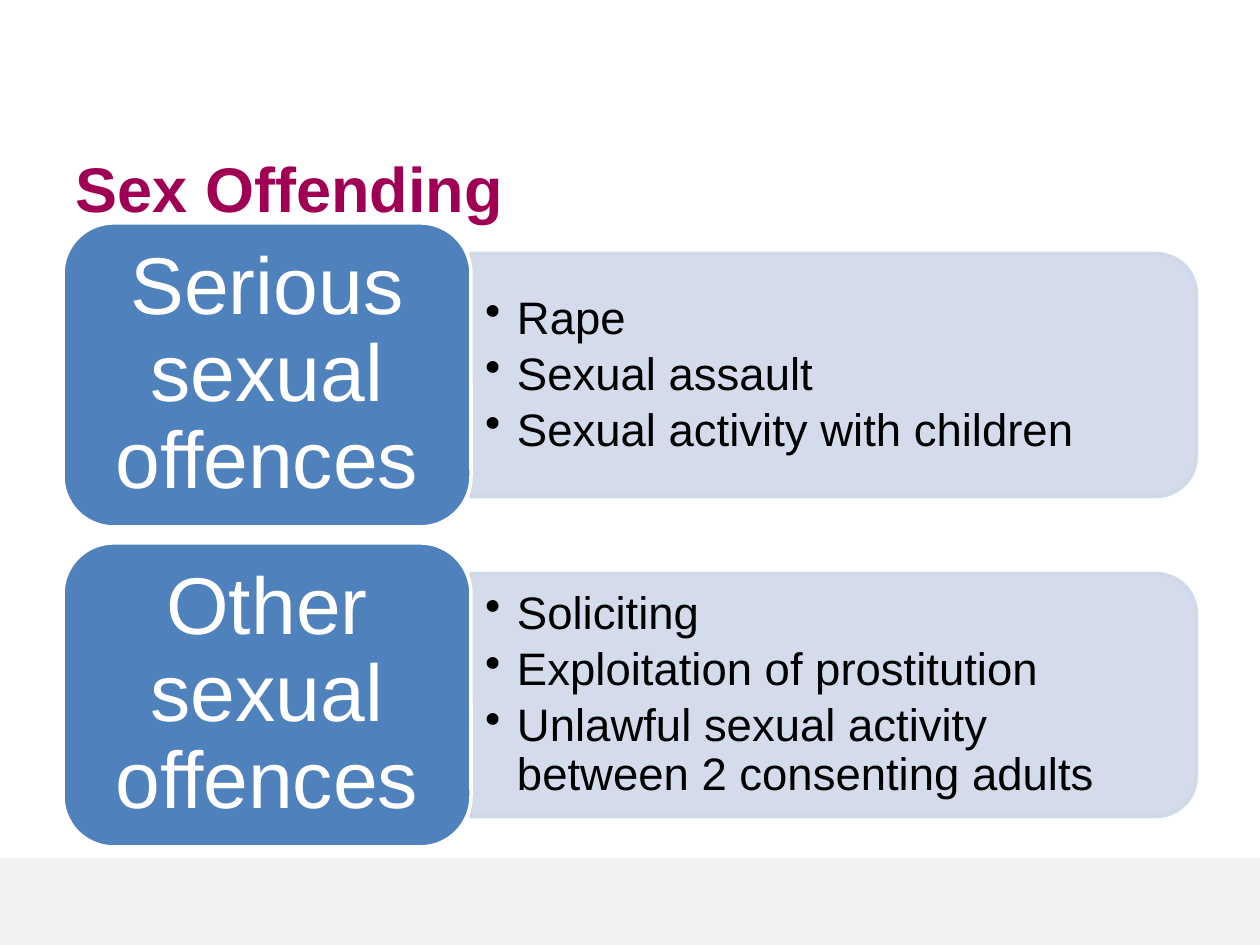
from lxml.etree import SubElement
from pptx import Presentation
from pptx.dml.color import RGBColor
from pptx.enum.shapes import MSO_SHAPE
from pptx.enum.text import MSO_ANCHOR, PP_ALIGN
from pptx.oxml.ns import qn
from pptx.util import Emu, Pt

PX_PER_INCH = 126
COLORS = {
    "title": "A00054",
    "footer": "F2F2F2",
    "panel": "D0D8E8",
    "label": "4F81BD",
    "white": "FFFFFF",
    "body": "000000",
}
TITLE_FONT = {"name": "Arial", "size": Pt(36), "bold": True}
LABEL_FONT = {"name": "Arial", "size": Pt(46)}
BODY_FONT = {"name": "Arial", "size": Pt(26)}
LABEL_PARA = {"alignment": PP_ALIGN.CENTER, "line_spacing": 0.9}
BODY_PARA = {"line_spacing": 0.9, "space_after": Pt(4)}
GROUPS = [
    ("Serious sexual offences",
     ["Rape", "Sexual assault", "Sexual activity with children"]),
    ("Other sexual offences",
     ["Soliciting", "Exploitation of prostitution",
      "Unlawful sexual activity between 2 consenting adults"]),
]
FIRST_TOP = 223
GROUP_PITCH = 320
BULLET_INDENT = 32


def px(n):
    return Emu(round(n * 914400 / PX_PER_INCH))


def rgb(name):
    return RGBColor.from_string(COLORS[name])


def set_attrs(obj, values):
    for key, value in values.items():
        setattr(obj, key, value)


def set_alpha(fill, percent):
    for clr in fill.iter(qn("a:srgbClr")):
        SubElement(clr, qn("a:alpha"), val=str(percent * 1000))


def add_bullet(p):
    pPr = p._p.get_or_add_pPr()
    pPr.set("marL", str(px(BULLET_INDENT)))
    pPr.set("indent", str(-px(BULLET_INDENT)))
    SubElement(pPr, qn("a:buChar"), char="•")


def add_box(slide, kind, box, fill, line=None):
    sp = slide.shapes.add_shape(kind, *map(px, box))
    sp.shadow.inherit = False
    sp.fill.solid()
    sp.fill.fore_color.rgb = rgb(fill)
    if line:
        sp.line.color.rgb = rgb(line)
        sp.line.width = Pt(2)
    else:
        sp.line.fill.background()
    return sp


def add_text(slide, box, lines, font, color, para, insets, bullets=False):
    tf = slide.shapes.add_textbox(*map(px, box)).text_frame
    side, end = map(px, insets)
    set_attrs(tf, {
        "word_wrap": True, "vertical_anchor": MSO_ANCHOR.MIDDLE,
        "margin_left": side, "margin_right": side,
        "margin_top": end, "margin_bottom": end,
    })
    for i, line in enumerate(lines):
        p = tf.add_paragraph() if i else tf.paragraphs[0]
        if bullets:
            add_bullet(p)
        set_attrs(p, para)
        r = p.add_run()
        r.text = line
        set_attrs(r.font, font)
        r.font.color.rgb = rgb(color)


def add_group(slide, top, label, items):
    panel = add_box(slide, MSO_SHAPE.ROUND_2_SAME_RECTANGLE,
                    (712, top - 211, 243, 726), "panel", "panel")
    panel.rotation = 90
    set_alpha(panel._element.spPr, 90)
    add_text(slide, (471, top + 43, 714, 219), items, BODY_FONT, "body",
             BODY_PARA, (14, 6), bullets=True)
    add_box(slide, MSO_SHAPE.ROUNDED_RECTANGLE, (63, top, 408, 304),
            "label", "white")
    add_text(slide, (78, top + 15, 378, 275), [label], LABEL_FONT, "white",
             LABEL_PARA, (24, 12))


def main():
    prs = Presentation()
    prs.slide_width, prs.slide_height = px(1260), px(945)
    slide = prs.slides.add_slide(prs.slide_layouts[6])
    add_box(slide, MSO_SHAPE.RECTANGLE, (0, 858, 1260, 87), "footer")
    add_text(slide, (63, 141, 1071, 93), ["Sex Offending"], TITLE_FONT,
             "title", {}, (13, 6))
    for i, (label, items) in enumerate(GROUPS):
        add_group(slide, FIRST_TOP + i * GROUP_PITCH, label, items)
    prs.save("out.pptx")


if __name__ == "__main__":
    main()
